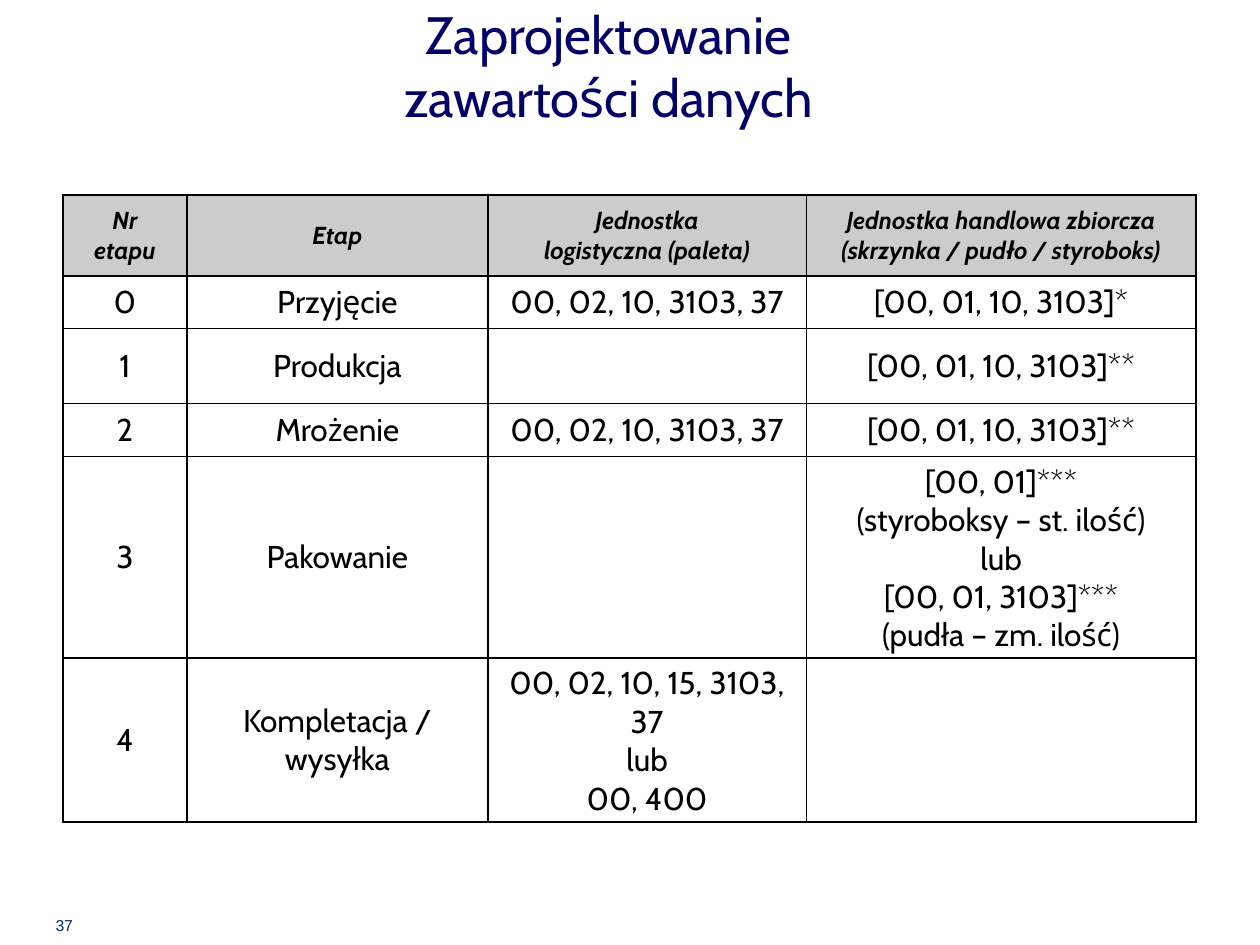
from copy import deepcopy

from lxml import etree
from pptx import Presentation
from pptx.dml.color import RGBColor
from pptx.enum.text import MSO_ANCHOR, PP_ALIGN
from pptx.oxml.ns import qn
from pptx.util import Pt

CENTER = PP_ALIGN.CENTER
MIDDLE, TOP = MSO_ANCHOR.MIDDLE, MSO_ANCHOR.TOP

# Content
TITLE = "Zaprojektowanie\nzawartości danych"
PAGE_NUMBER = "37"
HEADER = ["Nr\netapu", "Etap", "Jednostka\nlogistyczna (paleta)",
          "Jednostka handlowa zbiorcza\n(skrzynka / pudło / styroboks)"]
STAGES = [
    ["0", "Przyjęcie", "00, 02, 10, 3103, 37", "[00, 01, 10, 3103]*"],
    ["1", "Produkcja", "", "[00, 01, 10, 3103]**"],
    ["2", "Mrożenie", "00, 02, 10, 3103, 37", "[00, 01, 10, 3103]**"],
    ["3", "Pakowanie", "",
     "[00, 01]***\n(styroboksy – st. ilość)\nlub\n"
     "[00, 01, 3103]***\n(pudła – zm. ilość)"],
    ["4", "Kompletacja / wysyłka", "00, 02, 10, 15, 3103, 37\nlub\n00, 400", ""],
]

# Layout in points
COLUMN_WIDTHS = [70.8, 172, 182, 222.6]
ROW_HEIGHTS = [46.2, 30.3, 42.7, 30.3, 109.3, 89.5]
TABLE_LEFT, TABLE_TOP = 36, 111.4
COLORS = {"title": "000066", "page": "002C6C", "text": "000000",
          "border": "000000", "header": "CCCCCC", "white": "FFFFFF"}


def write(frame, text, size, color, font="Cabin", emphasis=False):
    paragraph = frame.paragraphs[0]
    paragraph.text = text
    paragraph.alignment = CENTER
    for run in paragraph.runs:
        run.font.size = Pt(size)
        run.font.name = font
        run.font.bold = run.font.italic = emphasis
        run.font.color.rgb = RGBColor.from_string(COLORS[color])
    # Line breaks take the size of the text around them
    for line_break in paragraph._p.findall(qn("a:br")):
        line_break.append(deepcopy(paragraph.runs[0]._r.rPr))


def add_label(slide, text, box, anchor, size, color, font):
    label = slide.shapes.add_textbox(*map(Pt, box))
    frame = label.text_frame
    frame.word_wrap = True
    frame.vertical_anchor = anchor
    write(frame, text, size, color, font)
    return label


def set_borders(cell):
    properties = cell._tc.get_or_add_tcPr()
    for position, side in enumerate(("a:lnL", "a:lnR", "a:lnT", "a:lnB")):
        line = etree.Element(qn(side), w=str(Pt(1)))
        fill = etree.SubElement(line, qn("a:solidFill"))
        etree.SubElement(fill, qn("a:srgbClr"), val=COLORS["border"])
        properties.insert(position, line)


presentation = Presentation()
presentation.slide_width, presentation.slide_height = Pt(720), Pt(540)
slide = presentation.slides.add_slide(presentation.slide_layouts[6])

# Page number and title
page = add_label(slide, PAGE_NUMBER, (2.9, 519.8, 67.7, 18), TOP, 9, "page", "Arial")
page.fill.solid()
page.fill.fore_color.rgb = RGBColor.from_string(COLORS["white"])
add_label(slide, TITLE, (108.7, 7.2, 478, 60), MIDDLE, 30, "title", "Cabin")

# Table of stages
rows = [HEADER] + STAGES
stages = slide.shapes.add_table(
    len(rows), len(HEADER), Pt(TABLE_LEFT), Pt(TABLE_TOP),
    Pt(sum(COLUMN_WIDTHS)), Pt(sum(ROW_HEIGHTS))).table
stages.horz_banding = False
for column, width in zip(stages.columns, COLUMN_WIDTHS):
    column.width = Pt(width)
for row, height in zip(stages.rows, ROW_HEIGHTS):
    row.height = Pt(height)

for r, texts in enumerate(rows):
    is_header = r == 0
    for c, text in enumerate(texts):
        cell = stages.cell(r, c)
        cell.vertical_anchor = MIDDLE
        cell.fill.solid()
        cell.fill.fore_color.rgb = RGBColor.from_string(
            COLORS["header" if is_header else "white"])
        set_borders(cell)
        if text:
            write(cell.text_frame, text, 14 if is_header else 18, "text",
                  emphasis=is_header)

presentation.save("out.pptx")
